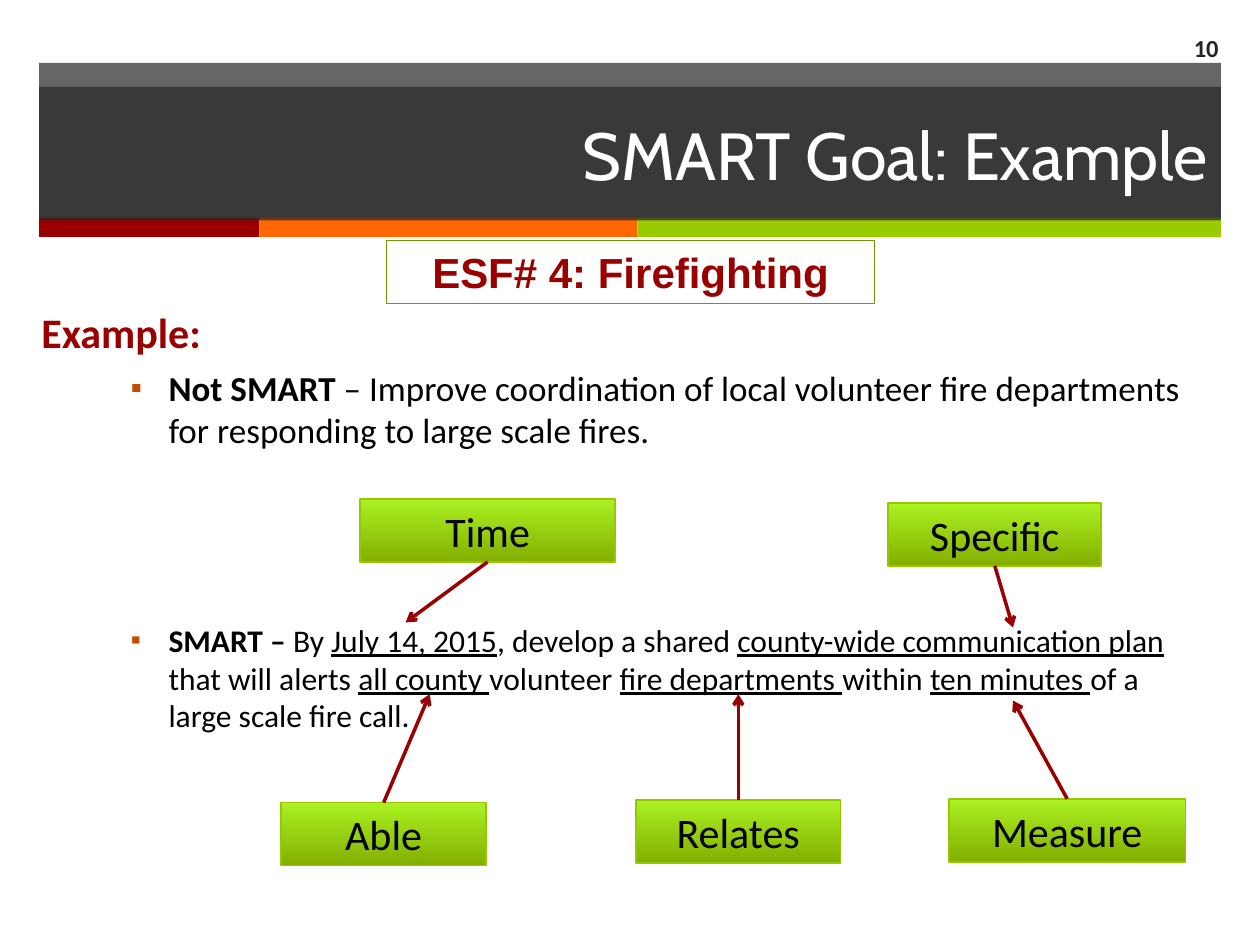
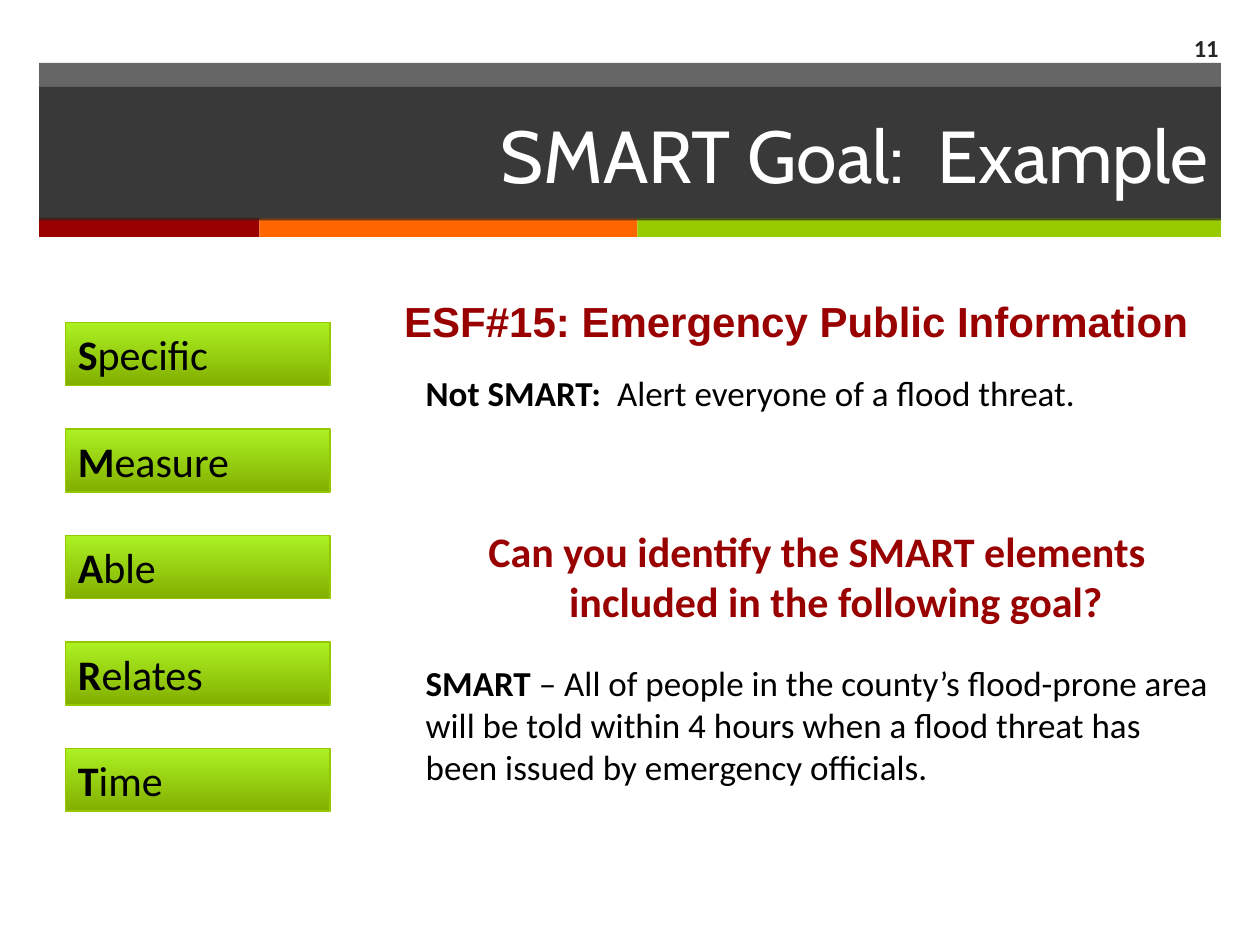
from dataclasses import dataclass

from lxml import etree
from pptx import Presentation
from pptx.dml.color import RGBColor
from pptx.enum.shapes import MSO_CONNECTOR, MSO_SHAPE
from pptx.enum.text import MSO_ANCHOR as Anchor, MSO_AUTO_SIZE as AutoSize, PP_ALIGN as Align
from pptx.oxml.ns import qn
from pptx.util import Inches, Pt

CELL = Inches(0.1)  # the slide is a grid of 100 columns by 75 rows
COLUMNS, ROWS = 100, 75
TITLE_ONLY = 5
TOP, BOTTOM = 0, 2  # connection sites of a rectangle

BLACK = RGBColor(0x00, 0x00, 0x00)
WHITE = RGBColor(0xFF, 0xFF, 0xFF)
CHARCOAL = RGBColor(0x26, 0x26, 0x26)
RED = RGBColor(0x99, 0x00, 0x00)
ORANGE = RGBColor(0xFF, 0x66, 0x00)
GREEN = RGBColor(0x99, 0xCC, 0x00)
TILE_DARK = RGBColor(0x83, 0xAF, 0x00)
TILE_LIGHT = RGBColor(0xAB, 0xF1, 0x23)
TILE_LINE = RGBColor(0x96, 0xC8, 0x00)
HEADING_LINE = RGBColor(0x73, 0x99, 0x00)

BODY_FONT, HEADING_FONT, TITLE_FONT = "Calibri", "Arial", "Cabin"


@dataclass(frozen=True)
class Box:
    """A rectangle measured in grid cells."""
    left: float
    top: float
    width: float
    height: float

    def inner(self, left, top, width, height):
        return Box(self.left + left, self.top + top, width, height)

    def emu(self):
        return [round(n * CELL) for n in (self.left, self.top, self.width, self.height)]


HEADER = Box(3.1, 5, 93.8, 13.8)
CONTENT = Box(0, 19, COLUMNS, ROWS - 19)
PAGE_NUMBER = Box(90.8, 1.8, 6.9, 3.9)


def write_text(paragraph, runs, size=20, color=BLACK, font=BODY_FONT, align=Align.LEFT,
               space=0, margin=0.0, indent=0.0, bullet=None):
    """Fill a paragraph from (text, style) pairs; style holds b for bold, u for underline."""
    paragraph.alignment = align
    paragraph.space_before = Pt(space)
    properties = paragraph._p.get_or_add_pPr()
    properties.set("marL", str(Inches(margin)))
    properties.set("indent", str(Inches(indent)))
    if bullet:
        add_bullet(properties, bullet)
    for text, style in runs:
        run = paragraph.add_run()
        run.text = text
        run.font.name, run.font.size = font, Pt(size)
        run.font.color.rgb = color
        run.font.bold, run.font.underline = "b" in style, "u" in style


def add_bullet(properties, character):
    color = etree.SubElement(properties, qn("a:buClr"))
    etree.SubElement(color, qn("a:srgbClr"), val="BF4D00")
    etree.SubElement(properties, qn("a:buSzPct"), val="90000")
    etree.SubElement(properties, qn("a:buFont"), typeface=BODY_FONT)
    etree.SubElement(properties, qn("a:buChar"), char=character)


def add_text_box(slide, box, paragraphs, anchor=Anchor.TOP):
    """Add a wrapping text box; paragraphs are (runs, format) pairs."""
    frame = slide.shapes.add_textbox(*box.emu()).text_frame
    frame.word_wrap = True
    frame.vertical_anchor = anchor
    for index, (runs, text_format) in enumerate(paragraphs):
        paragraph = frame.add_paragraph() if index else frame.paragraphs[0]
        write_text(paragraph, runs, **text_format)


def fill_solid(shape, color, opacity=100):
    shape.fill.solid()
    shape.fill.fore_color.rgb = color
    if opacity < 100:
        color_element = shape.element.spPr.find(qn("a:solidFill"))[0]
        etree.SubElement(color_element, qn("a:alpha"), val=str(opacity * 1000))


def add_rectangle(slide, box):
    shape = slide.shapes.add_shape(MSO_SHAPE.RECTANGLE, *box.emu())
    shape.shadow.inherit = False
    shape.line.fill.background()
    return shape


def outline(shape, color, width):
    shape.line.color.rgb = color
    shape.line.width = Pt(width)


def add_tile(slide, box, runs, align):
    tile = add_rectangle(slide, box)
    tile.fill.gradient()
    tile.fill.gradient_angle = 90
    for position, color in enumerate((TILE_DARK, TILE_LIGHT)):
        stop = tile.fill.gradient_stops[position]
        stop.color.rgb = color
        stop.position = position
    outline(tile, TILE_LINE, 1)
    write_text(tile.text_frame.paragraphs[0], runs, size=24, align=align)
    return tile


def add_arrow(slide, tile, site, target):
    left, top = (round(n * CELL) for n in target)
    arrow = slide.shapes.add_connector(MSO_CONNECTOR.STRAIGHT, left, top, left, top)
    arrow.begin_connect(tile, site)
    outline(arrow, RED, 2)
    etree.SubElement(arrow.line._get_or_add_ln(), qn("a:tailEnd"), type="arrow")
    etree.SubElement(arrow._element.spPr, qn("a:effectLst"))


def draw_header(slide, box, title_text, title_size):
    band = add_rectangle(slide, box.inner(0, 0, box.width, 12.4))
    fill_solid(band, CHARCOAL, 70)
    left = 0
    for color, width in ((RED, 17.5), (ORANGE, 30), (GREEN, 46.3)):
        fill_solid(add_rectangle(slide, box.inner(left, 12.3, width, 1.5)), color)
        left += width

    title = slide.shapes.title
    title.left, title.top, title.width, title.height = box.inner(0, 1.9, box.width, 10.6).emu()
    fill_solid(title, CHARCOAL, 70)
    title.text_frame.auto_size = AutoSize.NONE
    title.text_frame.vertical_anchor = Anchor.MIDDLE
    write_text(title.text_frame.paragraphs[0], [(title_text, "")], size=title_size,
               color=WHITE, font=TITLE_FONT, align=Align.RIGHT)
    title.element.getparent().append(title.element)  # bring in front of the band


def add_goal_slide(presentation, number, title_text, title_size):
    slide = presentation.slides.add_slide(presentation.slide_layouts[TITLE_ONLY])
    draw_header(slide, HEADER, title_text, title_size)
    number_format = dict(size=14, color=CHARCOAL, align=Align.RIGHT)
    add_text_box(slide, PAGE_NUMBER, [([(str(number), "b")], number_format)], Anchor.MIDDLE)
    return slide


def draw_firefighting_goal(slide, box):
    item = dict(margin=1.01, indent=-0.3, bullet="▪")
    add_text_box(slide, box.inner(2.3, 4.8, 94.6, 45), [
        ([("Example:", "b")], dict(size=24, color=RED)),
        ([("Not SMART", "b"),
          (" – Improve coordination of local volunteer fire departments "
           "for responding to large scale fires.", "")], dict(space=6, **item)),
        ([("SMART – ", "b"), ("By ", ""), ("July 14, 2015", "u"),
          (", develop a shared ", ""), ("county-wide communication plan ", "u"),
          ("that will alerts ", ""), ("all county ", "u"), ("volunteer ", ""),
          ("fire departments ", "u"), ("within ", ""), ("ten minutes ", "u"),
          ("of a large scale fire call.", "")], dict(size=18, space=97, **item)),
    ])

    heading = add_rectangle(slide, box.inner(30.7, 0.1, 38.7, 5))
    heading.fill.background()
    outline(heading, HEADING_LINE, 0.75)
    write_text(heading.text_frame.paragraphs[0], [("ESF# 4: Firefighting", "b")],
               size=24, color=RED, font=HEADING_FONT, align=Align.CENTER)

    callouts = (  # label, left, top, width, side the arrow leaves from, arrow target
        ("Time", 28.6, 20.6, 20.2, BOTTOM, (32.2, 30.4)),
        ("Specific", 70.5, 20.9, 16.9, BOTTOM, (80.4, 30.8)),
        ("Able", 22.3, 44.7, 16.3, TOP, (34.1, 36.1)),
        ("Relates", 50.5, 44.5, 16.2, TOP, (58.6, 36.1)),
        ("Measure", 75.3, 44.4, 18.8, TOP, (80.4, 36.6)),
    )
    for label, left, top, width, site, (target_left, target_top) in callouts:
        tile = add_tile(slide, box.inner(left, top, width, 5), [(label, "")], Align.CENTER)
        add_arrow(slide, tile, site, (box.left + target_left, box.top + target_top))


def draw_smart_list(slide, box):
    """Stack the five SMART words evenly from the top to the bottom of the box."""
    words = ("Specific", "Measure", "Able", "Relates", "Time")
    tile_height = 5
    pitch = (box.height - tile_height) / (len(words) - 1)
    for row, word in enumerate(words):
        tile_box = box.inner(0, row * pitch, box.width, tile_height)
        add_tile(slide, tile_box, [(word[0], "b"), (word[1:], "")], Align.LEFT)


def draw_public_information_goal(slide, box):
    add_text_box(slide, box.inner(0.4, 0, 65.9, 5), [
        ([("ESF#15: Emergency Public Information", "b")],
         dict(size=24, color=RED, font=HEADING_FONT))])
    add_text_box(slide, box.inner(0, 6, box.width, 43.7), [
        ([("Not SMART:  ", "b"), ("Alert everyone of a flood threat.", "")],
         dict(margin=0.21)),
        ([("Can you identify the SMART elements included in the following goal?", "b")],
         dict(size=24, color=RED, align=Align.CENTER, space=64, margin=0.51, indent=-0.3)),
        ([("SMART", "b"),
          (" – All of people in the county’s flood-prone area will be told within 4 hours "
           "when a flood threat has been issued by emergency officials.", "")],
         dict(space=20, margin=0.21)),
    ])


def main():
    presentation = Presentation()
    presentation.slide_width, presentation.slide_height = COLUMNS * CELL, ROWS * CELL

    firefighting = add_goal_slide(presentation, 10, "SMART Goal: Example", 38)
    draw_firefighting_goal(firefighting, CONTENT)

    information = add_goal_slide(presentation, 11, "SMART Goal:  Example", 42)
    draw_smart_list(information, CONTENT.inner(5.2, 6.6, 21, 38.8))
    draw_public_information_goal(information, CONTENT.inner(30.7, 4, 66.2, 49.7))

    presentation.save("out.pptx")


if __name__ == "__main__":
    main()
